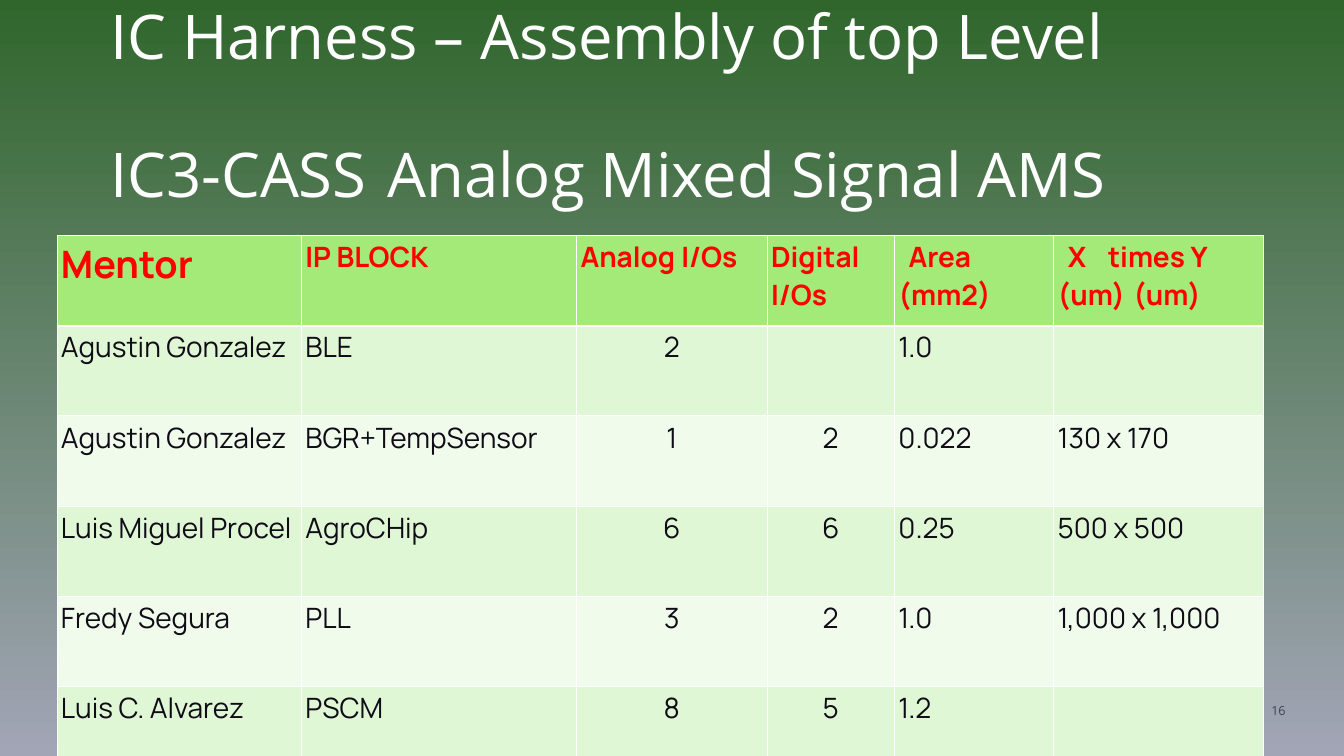
from lxml import etree
from pptx import Presentation
from pptx.dml.color import RGBColor
from pptx.enum.text import MSO_ANCHOR, MSO_AUTO_SIZE, PP_ALIGN
from pptx.oxml.ns import qn
from pptx.util import Inches, Pt

LEFT, CENTER = PP_ALIGN.LEFT, PP_ALIGN.CENTER
TOP = MSO_ANCHOR.TOP
NO_FIT = MSO_AUTO_SIZE.NONE

TITLE_FONT = {"name": "Open Sans", "size": Pt(88), "color": "FFFFFF"}
NUMBER_FONT = {"name": "Open Sans", "size": Pt(18), "color": "3E424F"}
HEADER_FONT = {"name": "Manrope", "size": Pt(40), "bold": True, "color": "FF0000"}
MENTOR_FONT = {**HEADER_FONT, "size": Pt(54)}
BODY_FONT = {**HEADER_FONT, "bold": False, "color": "0F0C16"}

HEADER_FILL = "A4EA78"
BAND_FILLS = ["E0F7D6", "F0FBEC"]
BORDER_COLOR = "FEFFFE"
COLUMN_WIDTHS = [4.85, 5.46, 3.78, 2.53, 3.16, 4.16]
ROW_HEIGHT = 1.79
IO_COLUMNS = (2, 3)

TITLE_LINES = [
    ("IC Harness – Assembly of top Level", 0, None),
    ("IC3-CASS\tAnalog Mixed Signal AMS", 0, 6.33),
]
HEADERS = [
    [("Mentor", 0, None)],
    [("IP BLOCK", 0, None)],
    [("Analog\tI/Os", 0, 2.2)],
    [("Digital I/Os", 0, None)],
    [("Area (mm2)", 0.2, None)],
    [("X\ttimes Y", 0.2, 0.9), ("(um)\t(um)", 0, 2.12)],
]
BLOCKS = [
    ["Agustin Gonzalez", "BLE", "2", "", "1.0", ""],
    ["Agustin Gonzalez", "BGR+TempSensor", "1", "2", "0.022", "130 x 170"],
    ["Luis Miguel Procel", "AgroCHip", "6", "6", "0.25", "500 x 500"],
    ["Fredy Segura", "PLL", "3", "2", "1.0", "1,000 x 1,000"],
    ["Luis C. Alvarez", "PSCM", "8", "5", "1.2", ""],
]


def rgb(value):
    return RGBColor.from_string(value)


def apply_font(font, style):
    for key, value in style.items():
        if key == "color":
            font.color.rgb = rgb(value)
        else:
            setattr(font, key, value)


def write_lines(frame, lines, style, align=LEFT):
    for number, (text, indent, tab) in enumerate(lines):
        paragraph = frame.paragraphs[0] if number == 0 else frame.add_paragraph()
        paragraph.alignment = align
        properties = paragraph._p.get_or_add_pPr()
        properties.set("marL", "0")
        properties.set("indent", str(Inches(indent)))
        if tab:
            stops = etree.SubElement(properties, qn("a:tabLst"))
            etree.SubElement(stops, qn("a:tab"), pos=str(Inches(tab)), algn="l")
        run = paragraph.add_run()
        run.text = text
        apply_font(run.font, style)


def format_frame(frame, top_inset=0.04):
    settings = {
        "word_wrap": True, "auto_size": NO_FIT, "vertical_anchor": TOP,
        "margin_left": Inches(0.04), "margin_right": Inches(0.04),
        "margin_top": Inches(top_inset), "margin_bottom": Inches(0.04),
    }
    for key, value in settings.items():
        setattr(frame, key, value)


def paint_background(slide):
    fill = slide.background.fill
    fill.gradient()
    fill.gradient_angle = 270
    for stop, position, color in zip(fill.gradient_stops, (0, 1), ("30662C", "A2A5B6")):
        stop.position = position
        stop.color.rgb = rgb(color)


def add_title(slide):
    title = slide.shapes.title
    title.left, title.top = Inches(2.15), Inches(0)
    title.width, title.height = Inches(23.65), Inches(3.88)
    format_frame(title.text_frame, 0.12)
    write_lines(title.text_frame, TITLE_LINES, TITLE_FONT)
    for paragraph in title.text_frame.paragraphs:
        paragraph.line_spacing = 0.9
    title.text_frame.paragraphs[1].space_before = Pt(103)


def add_page_number(slide):
    box = slide.shapes.add_textbox(Inches(24.88), Inches(13.9), Inches(0.98), Inches(0.53))
    format_frame(box.text_frame)
    write_lines(box.text_frame, [("16", 0, None)], NUMBER_FONT, CENTER)


def format_cell(cell, fill, bottom_width):
    cell.margin_left = cell.margin_right = Inches(0.08)
    cell.vertical_anchor = TOP
    properties = cell._tc.get_or_add_tcPr()
    for side, width in (("L", 1), ("R", 1), ("T", 1), ("B", bottom_width)):
        line = etree.SubElement(properties, qn(f"a:ln{side}"), w=str(Pt(width)))
        solid = etree.SubElement(line, qn("a:solidFill"))
        etree.SubElement(solid, qn("a:srgbClr"), val=BORDER_COLOR)
    cell.fill.solid()
    cell.fill.fore_color.rgb = rgb(fill)


def add_block_table(slide):
    row_count = len(BLOCKS) + 1
    table = slide.shapes.add_table(
        row_count, len(COLUMN_WIDTHS), Inches(1.13), Inches(4.67),
        Inches(sum(COLUMN_WIDTHS)), Inches(ROW_HEIGHT * row_count)).table
    for column, width in zip(table.columns, COLUMN_WIDTHS):
        column.width = Inches(width)
    for row in table.rows:
        row.height = Inches(ROW_HEIGHT)
    for column, lines in enumerate(HEADERS):
        cell = table.cell(0, column)
        format_cell(cell, HEADER_FILL, 3)
        write_lines(cell.text_frame, lines, HEADER_FONT if column else MENTOR_FONT)
    for row, block in enumerate(BLOCKS, start=1):
        for column, value in enumerate(block):
            cell = table.cell(row, column)
            format_cell(cell, BAND_FILLS[(row - 1) % 2], 1)
            if value:
                align = CENTER if column in IO_COLUMNS else LEFT
                write_lines(cell.text_frame, [(value, 0, None)], BODY_FONT, align)


def main():
    presentation = Presentation()
    presentation.slide_width = Inches(26.67)
    presentation.slide_height = Inches(15)
    slide = presentation.slides.add_slide(presentation.slide_layouts[5])
    paint_background(slide)
    add_title(slide)
    add_page_number(slide)
    add_block_table(slide)
    presentation.save("out.pptx")


if __name__ == "__main__":
    main()
